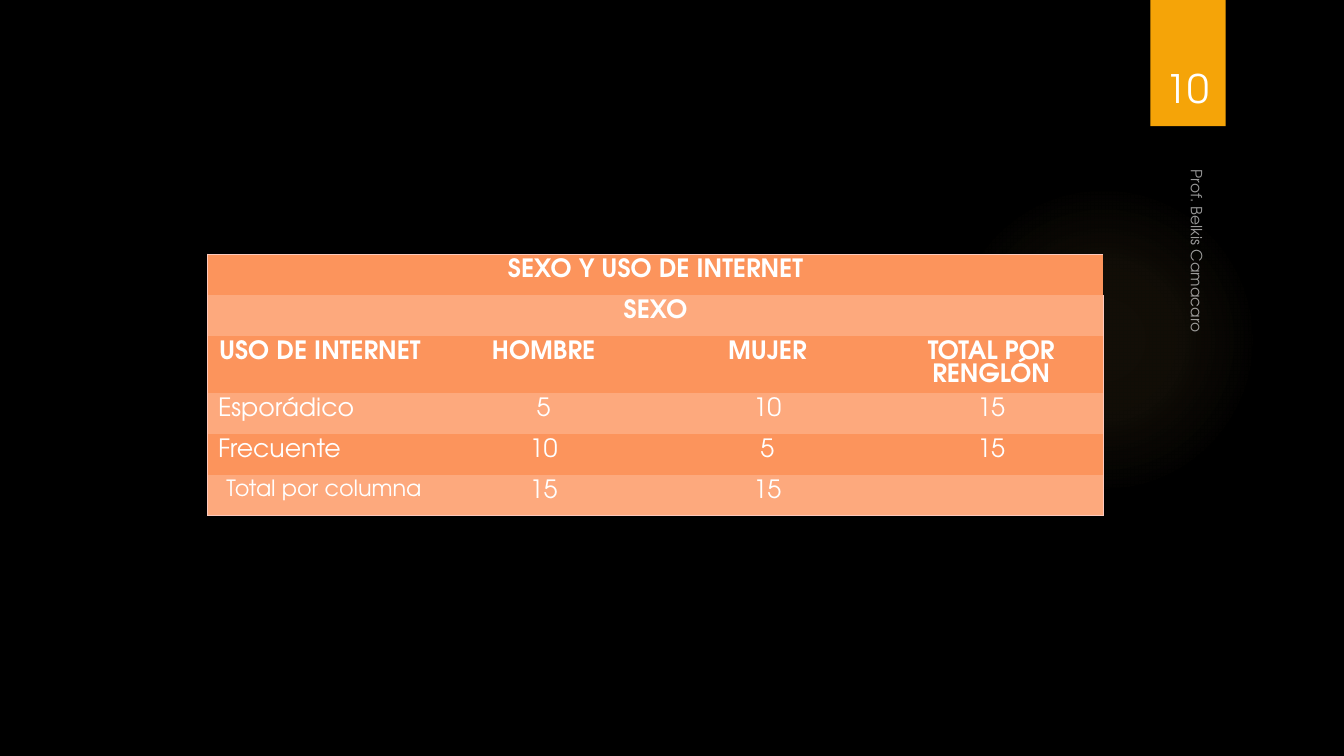
from dataclasses import dataclass

from lxml import etree
from pptx import Presentation
from pptx import util as u
from pptx.dml import color
from pptx.enum import shapes, text
from pptx.oxml import ns

FONT = "TeX Gyre Adventor"
WHITE, AMBER, GLOW, BORDER = "FFFFFF", "F5A408", "FAC96A", "FDC9BD"
BANDS = ("FC945C", "FDA97D")
LEFT, CENTER, RIGHT = text.PP_ALIGN.LEFT, text.PP_ALIGN.CENTER, text.PP_ALIGN.RIGHT

ROWS = [
    ["SEXO Y USO DE INTERNET", "", "", ""],
    ["", "SEXO", "", ""],
    ["USO DE INTERNET", "HOMBRE", "MUJER", "TOTAL POR RENGLÓN"],
    ["Esporádico", "5", "10", "15"],
    ["Frecuente", "10", "5", "15"],
    ["Total por columna", "15", "15", ""],
]
HEADER_ROWS = 3
ROW_HEIGHTS = [1.03, 1.03, 1.45, 1.03, 1.03, 1.03]
COLUMN_WIDTH = 5.64


@dataclass
class Label:
    words: str
    left: float
    top: float
    width: float
    height: float
    size: float
    align: text.PP_ALIGN
    rotation: float = 0
    opacity: int = 100


LABELS = [
    Label("Prof. Belkis Camacaro", 24.87, 8.97, 10.72, 0.84, 11, LEFT, 90, 60),
    Label("10", 28.75, 0.81, 2.34, 2.13, 28, CENTER),
]


def rgb(value: str) -> color.RGBColor:
    return color.RGBColor.from_string(value)


def sub(parent, tag: str, **attrs):
    """Append a DrawingML child element."""
    return etree.SubElement(parent, ns.qn(tag), {k: str(v) for k, v in attrs.items()})


def add_run(p, words: str, size: float, bold: bool = False):
    r = p.add_run()
    r.text = words
    r.font.name, r.font.size, r.font.bold = FONT, u.Pt(size), bold
    r.font.color.rgb = rgb(WHITE)
    return r


def add_plain_shape(slide, kind, left: float, top: float, width: float, height: float, fill: str):
    sp = slide.shapes.add_shape(kind, u.Cm(left), u.Cm(top), u.Cm(width), u.Cm(height))
    sp.shadow.inherit = False
    sp.fill.solid()
    sp.fill.fore_color.rgb = rgb(fill)
    sp.line.fill.background()
    return sp


def add_glow(slide) -> None:
    sp = add_plain_shape(slide, shapes.MSO_SHAPE.OVAL, 23.9, 4.65, 7.82, 7.82, GLOW)
    solid = sp._element.spPr.find(ns.qn("a:solidFill"))
    grad = etree.Element(ns.qn("a:gradFill"))
    stops = sub(grad, "a:gsLst")
    for position, alpha in ((0, 7), (36, 6), (69, 0)):
        stop = sub(stops, "a:gs", pos=position * 1000)
        sub(sub(stop, "a:srgbClr", val=GLOW), "a:alpha", val=alpha * 1000)
    circle = sub(grad, "a:path", path="circle")
    sub(circle, "a:fillToRect", l=50000, t=50000, r=50000, b=50000)
    solid.getparent().replace(solid, grad)


def add_label(slide, label: Label) -> None:
    sp = slide.shapes.add_textbox(u.Cm(label.left), u.Cm(label.top), u.Cm(label.width), u.Cm(label.height))
    sp.rotation = label.rotation
    tf = sp.text_frame
    tf.word_wrap = True
    tf.vertical_anchor = text.MSO_ANCHOR.BOTTOM
    p = tf.paragraphs[0]
    p.alignment = label.align
    r = add_run(p, label.words, label.size)
    if label.opacity < 100:
        tint = r._r.rPr.find(ns.qn("a:solidFill"))[0]
        sub(tint, "a:alpha", val=label.opacity * 1000)


def set_borders(cell, outer: dict[str, bool]) -> None:
    """Draw the sides on the table's edge and hide the inner ones."""
    tc_pr = cell._tc.get_or_add_tcPr()
    for index, (side, on_edge) in enumerate(outer.items()):
        line = etree.Element(ns.qn(f"a:{side}"), w=str(u.Pt(0.75)))
        if on_edge:
            sub(sub(line, "a:solidFill"), "a:srgbClr", val=BORDER)
        else:
            sub(line, "a:noFill")
        tc_pr.insert(index, line)


def add_usage_table(slide) -> None:
    rows, cols = len(ROWS), len(ROWS[0])
    frame = slide.shapes.add_table(rows, cols, u.Cm(5.24), u.Cm(6.4),
                                   u.Cm(COLUMN_WIDTH * cols), u.Cm(sum(ROW_HEIGHTS)))
    table = frame.table
    for column in table.columns:
        column.width = u.Cm(COLUMN_WIDTH)
    for i, words_in_row in enumerate(ROWS):
        table.rows[i].height = u.Cm(ROW_HEIGHTS[i])
        for j, words in enumerate(words_in_row):
            cell = table.cell(i, j)
            cell.fill.solid()
            cell.fill.fore_color.rgb = rgb(BANDS[i % 2])
            set_borders(cell, {"lnL": j == 0, "lnR": j == cols - 1, "lnT": i == 0, "lnB": i == rows - 1})
            if not words:
                continue
            header, total = i < HEADER_ROWS, i == rows - 1
            p = cell.text_frame.paragraphs[0]
            if header or j > 0:
                p.alignment = CENTER
            else:
                p.alignment = RIGHT if total else LEFT
            add_run(p, words, 16 if total and j == 0 else 18, header)
    table.cell(0, 0).merge(table.cell(0, cols - 1))
    table.cell(1, 1).merge(table.cell(1, 2))


def main() -> None:
    prs = Presentation()
    prs.slide_width, prs.slide_height = u.Cm(33.87), u.Cm(19.05)
    s = prs.slides.add_slide(prs.slide_layouts[6])
    s.background.fill.solid()
    s.background.fill.fore_color.rgb = rgb("000000")
    add_glow(s)
    add_plain_shape(s, shapes.MSO_SHAPE.RECTANGLE, 28.99, 0, 1.9, 3.18, AMBER)
    add_usage_table(s)
    for label in LABELS:
        add_label(s, label)
    prs.save("out.pptx")


if __name__ == "__main__":
    main()
